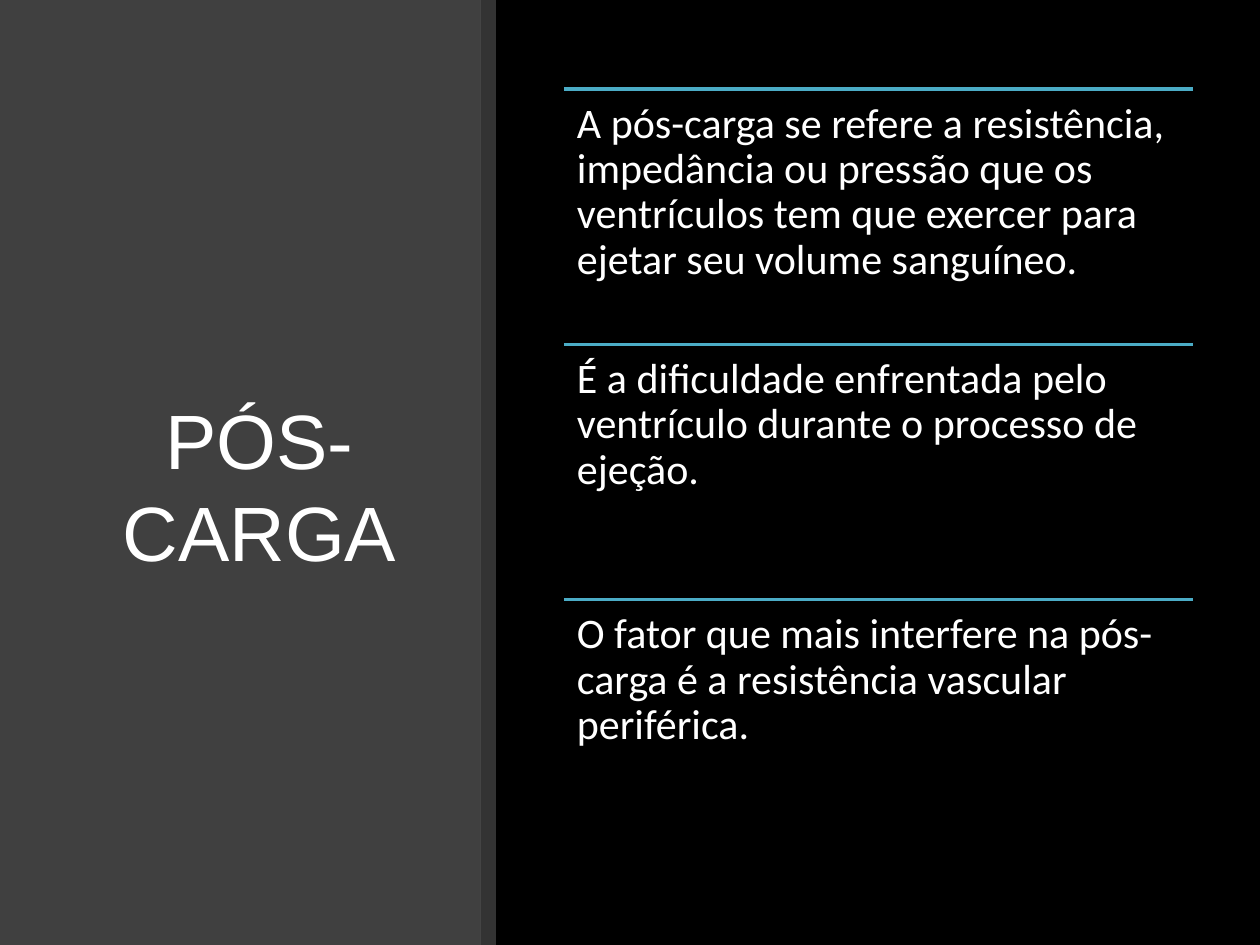
from lxml import etree
from pptx import Presentation, util as u
from pptx.dml.color import RGBColor
from pptx.enum import shapes, text
from pptx.oxml.ns import qn

TITLE = "PÓS-CARGA"
POINTS = [
    "A pós-carga se refere a resistência, impedância ou pressão que os ventrículos tem que exercer para ejetar seu volume sanguíneo.",
    "É a dificuldade enfrentada pelo ventrículo durante o processo de ejeção.",
    "O fator que mais interfere na pós-carga é a resistência vascular periférica.",
]

BLACK = RGBColor(0x00, 0x00, 0x00)
GRAY = RGBColor(0x40, 0x40, 0x40)
WHITE = RGBColor(0xFF, 0xFF, 0xFF)
BLUE = RGBColor(0x4B, 0xAC, 0xC6)

SLIDE_WIDTH, SLIDE_HEIGHT = 1260, 945
PANEL_WIDTH, STRIP_WIDTH = 481, 15
TITLE_BOX = (87, 112, 345, 745)
LIST_LEFT, LIST_TOP, LIST_WIDTH, LIST_HEIGHT = 564, 89, 629, 766
INSET = 13


def px(value):
    return u.Emu(round(value * 914400 / 126))


def add_band(page, left, width, color):
    band = page.shapes.add_shape(
        shapes.MSO_SHAPE.RECTANGLE, px(left), 0, px(width), px(SLIDE_HEIGHT))
    band.shadow.inherit = False
    band.fill.solid()
    band.fill.fore_color.rgb = color
    band.line.fill.background()
    return band


def format_text(para, size, name):
    para.font.size = u.Pt(size)
    para.font.name = name
    para.font.color.rgb = WHITE


def add_point(group, top, height, wording):
    rule = group.shapes.add_connector(
        shapes.MSO_CONNECTOR.STRAIGHT,
        px(LIST_LEFT), px(top), px(LIST_LEFT + LIST_WIDTH), px(top))
    rule.line.color.rgb = BLUE
    rule.line.width = u.Pt(2)
    etree.SubElement(rule._element.spPr, qn("a:effectLst"))

    box = group.shapes.add_textbox(px(LIST_LEFT), px(top), px(LIST_WIDTH), px(height))
    frame = box.text_frame
    frame.word_wrap = True
    frame.margin_left = frame.margin_right = px(INSET)
    frame.margin_top = frame.margin_bottom = px(INSET)
    para = frame.paragraphs[0]
    para.text = wording
    para.line_spacing = 0.9
    format_text(para, 24, "Calibri")


def main():
    deck = Presentation()
    deck.slide_width, deck.slide_height = px(SLIDE_WIDTH), px(SLIDE_HEIGHT)
    page = deck.slides.add_slide(deck.slide_layouts[5])
    page.background.fill.solid()
    page.background.fill.fore_color.rgb = BLACK

    panel = add_band(page, 0, PANEL_WIDTH, GRAY)
    title = page.shapes.title
    title._element.addprevious(panel._element)
    title.left, title.top, title.width, title.height = map(px, TITLE_BOX)
    frame = title.text_frame
    frame.text = TITLE
    frame.word_wrap = True
    frame.auto_size = text.MSO_AUTO_SIZE.NONE
    frame.vertical_anchor = text.MSO_ANCHOR.MIDDLE
    frame.paragraphs[0].alignment = text.PP_ALIGN.CENTER
    format_text(frame.paragraphs[0], 44, "Arial")

    strip = add_band(page, PANEL_WIDTH, STRIP_WIDTH, WHITE)
    tint = strip._element.spPr.find(qn("a:solidFill"))[0]
    etree.SubElement(tint, qn("a:alpha"), val="20000")

    group = page.shapes.add_group_shape()
    height = LIST_HEIGHT / len(POINTS)
    for index, wording in enumerate(POINTS):
        add_point(group, LIST_TOP + index * height, height, wording)

    deck.save("out.pptx")


if __name__ == "__main__":
    main()
